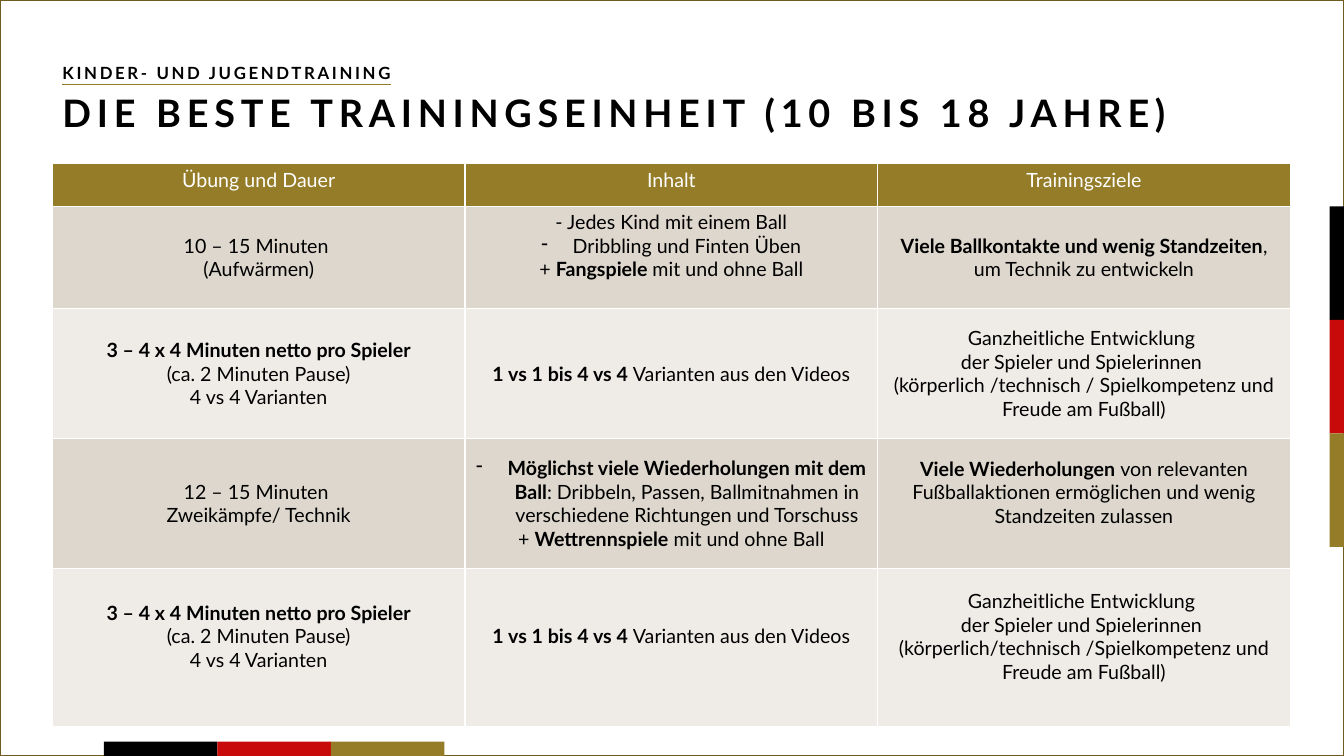
from lxml import etree
from pptx import Presentation
from pptx.dml.color import RGBColor
from pptx.enum.shapes import MSO_SHAPE
from pptx.enum.text import MSO_ANCHOR, MSO_AUTO_SIZE, PP_ALIGN
from pptx.oxml.ns import qn
from pptx.util import Cm, Pt

RECTANGLE = MSO_SHAPE.RECTANGLE
TOP, MIDDLE = MSO_ANCHOR.TOP, MSO_ANCHOR.MIDDLE
LEFT, CENTER = PP_ALIGN.LEFT, PP_ALIGN.CENTER
NO_AUTOFIT = MSO_AUTO_SIZE.NONE

# Content: *bold* spans, ">" starts a dash bullet
TITLE = "DIE BESTE TRAININGSEINHEIT (10 BIS 18 JAHRE)"
TOPIC = "KINDER- UND JUGENDTRAINING"
HEADER = [["Übung und Dauer"], ["Inhalt"], ["Trainingsziele"]]
GAME_TIME = ["*3 – 4 x 4 Minuten netto pro Spieler*", "(ca. 2 Minuten Pause)", "4 vs 4 Varianten"]
GAME_CONTENT = ["*1 vs 1 bis 4 vs 4 *Varianten aus den Videos"]
GAME_GOAL = ["Ganzheitliche Entwicklung ", "der Spieler und Spielerinnen "]
ROWS = [
    HEADER,
    [["10 – 15 Minuten ", "(Aufwärmen)"],
     ["- Jedes Kind mit einem Ball", ">Dribbling und Finten Üben",
      "+ *Fangspiele *mit und ohne Ball"],
     ["*Viele Ballkontakte und wenig Standzeiten*, um Technik zu entwickeln"]],
    [GAME_TIME, GAME_CONTENT,
     GAME_GOAL + ["(körperlich /technisch / Spielkompetenz und Freude am Fußball)"]],
    [["12 – 15 Minuten ", "Zweikämpfe/ Technik"],
     [">*Möglichst viele Wiederholungen mit dem Ball*: Dribbeln, Passen, "
      "Ballmitnahmen in verschiedene Richtungen und Torschuss",
      "+ *Wettrennspiele* mit und ohne Ball"],
     ["*Viele Wiederholungen *von relevanten Fußballaktionen ermöglichen "
      "und wenig Standzeiten zulassen"]],
    [GAME_TIME, GAME_CONTENT,
     GAME_GOAL + ["(körperlich/technisch /Spielkompetenz und Freude am Fußball)"]],
]
ROW_HEIGHTS = [1.07, 2.57, 3.28, 3.28, 3.99]
RAISED_CELLS = {(1, 1), (3, 2), (4, 0), (4, 1), (4, 2)}

FONT = "Lato"
COLORS = {"black": "000000", "red": "C80A0A", "gold": "957C28", "frame": "6E5C1E",
          "white": "FFFFFF", "dark band": "DDD7CD", "light band": "EFECE8"}
FLAG = ["black", "red", "gold"]

# Sizes in centimetres
SLIDE_WIDTH, SLIDE_HEIGHT = 33.87, 19.05
MARGIN = 1.32
TABLE_TOP, COLUMN_WIDTH = 4.13, 10.4
BAR_LENGTH, BAR_THICKNESS = 2.86, 0.36
INDENT = 0.79


def rgb(name):
    return RGBColor.from_string(COLORS[name])


def add_solid(parent, name):
    fill = etree.SubElement(parent, qn("a:solidFill"))
    etree.SubElement(fill, qn("a:srgbClr"), val=COLORS[name])


def set_bullet(para, dash):
    properties = para._p.get_or_add_pPr()
    indent = Cm(INDENT) if dash else 0
    properties.set("marL", str(indent))
    properties.set("indent", str(-indent))
    if dash:
        etree.SubElement(properties, qn("a:buChar"), char="-")
    else:
        etree.SubElement(properties, qn("a:buNone"))


def format_span(span, size, color, bold):
    span.font.size = Pt(size)
    span.font.bold = bold
    span.font.color.rgb = rgb(color)
    span.font.name = FONT


def add_rectangle(left, top, width, height):
    box = page.shapes.add_shape(RECTANGLE, Cm(left), Cm(top), Cm(width), Cm(height))
    box.shadow.inherit = False
    return box


def add_bar(left, top, width, height, color):
    bar = add_rectangle(left, top, width, height)
    bar.fill.solid()
    bar.fill.fore_color.rgb = rgb(color)
    bar.line.fill.background()


def fill_heading(box, text, top, width, height, size, spacing, anchor):
    box.left, box.top, box.width, box.height = Cm(MARGIN), Cm(top), Cm(width), Cm(height)
    frame = box.text_frame
    frame.text = text
    frame.auto_size = NO_AUTOFIT
    frame.word_wrap = True
    frame.vertical_anchor = anchor
    para = frame.paragraphs[0]
    para.alignment = LEFT
    para.line_spacing = 0.9
    para.space_before = Pt(0)
    set_bullet(para, False)
    span = para.runs[0]
    format_span(span, size, "black", True)
    span._r.get_or_add_rPr().set("spc", str(spacing))
    return span


def fill_cell(cell, lines, color, fill, raised, anchor):
    cell.margin_left = cell.margin_right = Cm(0.2)
    cell.margin_top = Cm(0.1)
    cell.margin_bottom = Cm(0.68 if raised else 0.1)
    cell.vertical_anchor = anchor
    properties = cell._tc.get_or_add_tcPr()
    for side in ("lnL", "lnR", "lnT", "lnB"):
        add_solid(etree.SubElement(properties, qn("a:" + side), w=str(Pt(1))), "white")
    cell.fill.solid()
    cell.fill.fore_color.rgb = rgb(fill)
    frame = cell.text_frame
    for number, line in enumerate(lines):
        para = frame.add_paragraph() if number else frame.paragraphs[0]
        para.alignment = CENTER
        set_bullet(para, line.startswith(">"))
        for part, text in enumerate(line.lstrip(">").split("*")):
            if text:
                span = para.add_run()
                span.text = text
                format_span(span, 14, color, part % 2 == 1)


deck = Presentation()
deck.slide_width, deck.slide_height = Cm(SLIDE_WIDTH), Cm(SLIDE_HEIGHT)
page = deck.slides.add_slide(deck.slide_layouts[1])

# Headings
fill_heading(page.shapes.title, TITLE, 2.31, 31.2, 1.2, 27, 410, MIDDLE)
topic = fill_heading(page.placeholders[1], TOPIC, 1.52, 23.2, 0.8, 12, 190, TOP)
topic.font.underline = True
underline = etree.Element(qn("a:uFill"))
add_solid(underline, "gold")
topic._r.rPr.find(qn("a:solidFill")).addnext(underline)

# Frame and flag bars
frame_box = add_rectangle(0, 0, SLIDE_WIDTH, SLIDE_HEIGHT)
frame_box.fill.background()
frame_box.line.color.rgb = rgb("frame")
frame_box.line.width = Pt(1)
for step, color in enumerate(FLAG):
    offset = step * BAR_LENGTH
    add_bar(SLIDE_WIDTH - BAR_THICKNESS, 5.2 + offset, BAR_THICKNESS, BAR_LENGTH, color)
    add_bar(2.62 + offset, SLIDE_HEIGHT - BAR_THICKNESS, BAR_LENGTH, BAR_THICKNESS, color)

# Training table
table = page.shapes.add_table(len(ROWS), len(HEADER), Cm(MARGIN), Cm(TABLE_TOP),
                              Cm(COLUMN_WIDTH * len(HEADER)), Cm(sum(ROW_HEIGHTS))).table
table.first_row = table.horz_banding = False
for column in table.columns:
    column.width = Cm(COLUMN_WIDTH)
for row, cells in enumerate(ROWS):
    table.rows[row].height = Cm(ROW_HEIGHTS[row])
    band = "dark band" if row % 2 else "light band"
    color, fill, anchor = ("black", band, MIDDLE) if row else ("white", "gold", TOP)
    for column, lines in enumerate(cells):
        fill_cell(table.cell(row, column), lines, color, fill,
                  (row, column) in RAISED_CELLS, anchor)

deck.save("out.pptx")
